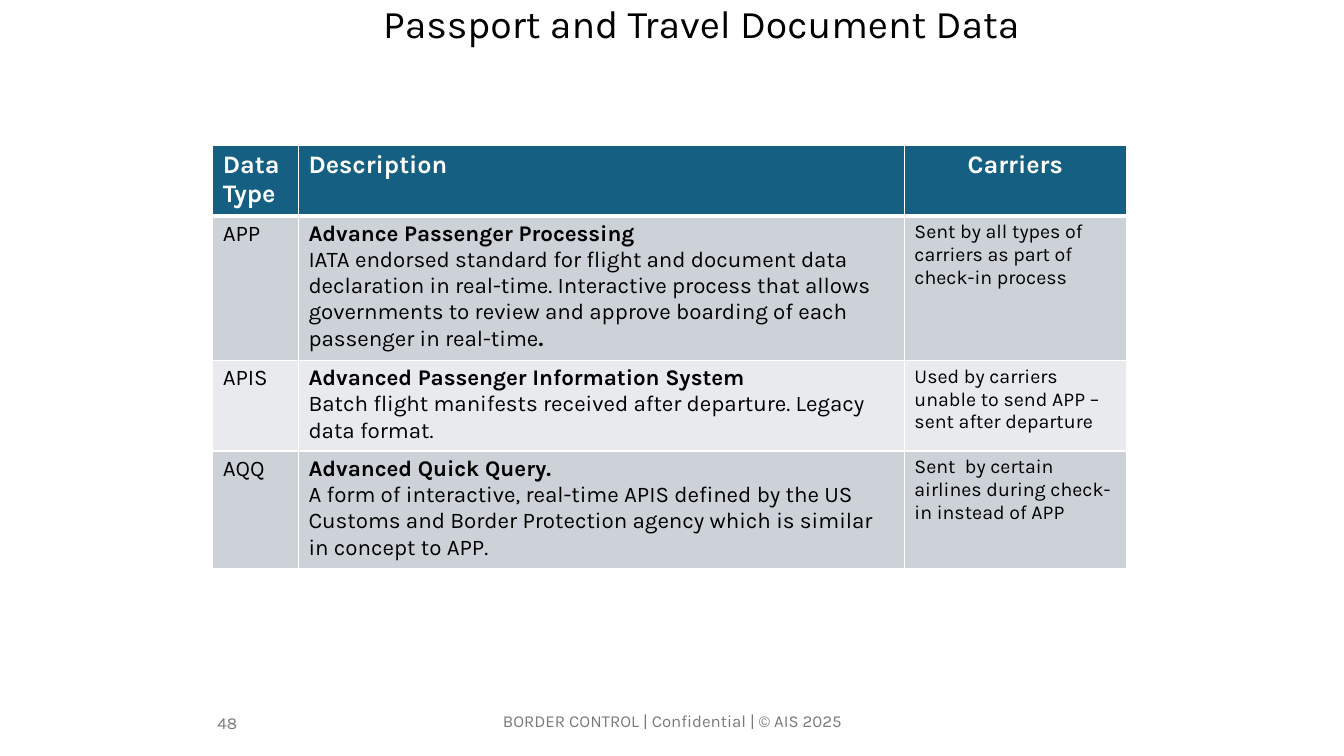
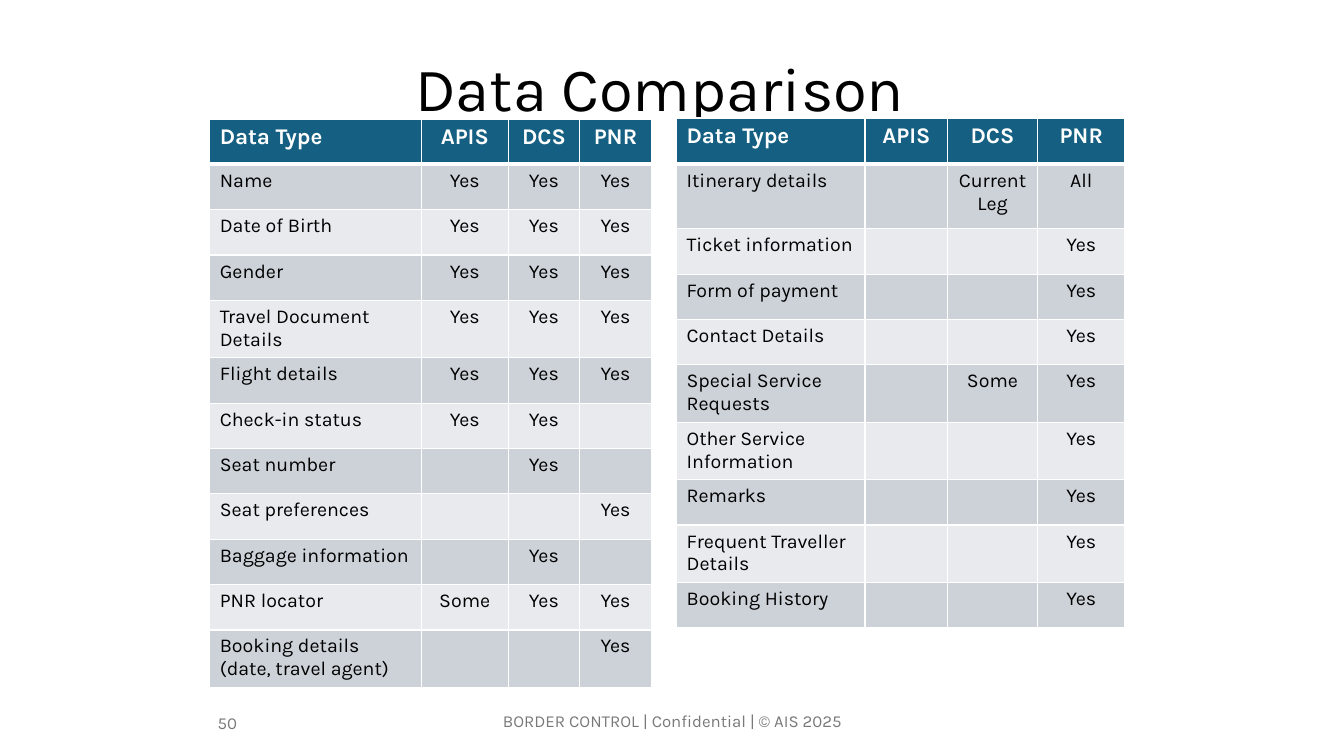
from lxml.etree import SubElement
from pptx import Presentation
from pptx.dml.color import RGBColor
from pptx.enum.text import MSO_ANCHOR, MSO_AUTO_SIZE, PP_ALIGN
from pptx.oxml.ns import qn
from pptx.util import Inches, Pt

# Shared style
FONT = "Karla"
COLORS = {
    "text": "000000",
    "footer": "797979",
    "header": "156082",
    "dark_band": "CCD2D8",
    "light_band": "E8EAED",
    "white": "FFFFFF",
}
LEFT, CENTER, RIGHT = PP_ALIGN.LEFT, PP_ALIGN.CENTER, PP_ALIGN.RIGHT
FOOTER = "BORDER CONTROL | Confidential | © AIS 2025"

# Travel document table: a description is a bold name, its text and a bold ending
DOCUMENT_HEADER = ("Data Type", "Description", "Carriers")
DOCUMENT_ROWS = [
    ("APP",
     [[("Advance Passenger Processing", True)],
      [("IATA endorsed standard for flight and document data declaration in "
        "real-time. Interactive process that allows governments to review and "
        "approve boarding of each passenger in real-time", False), (".", True)]],
     "Sent by all types of carriers as part of check-in process"),
    ("APIS",
     [[("Advanced Passenger Information System", True)],
      [("Batch flight manifests received after departure. Legacy data format.",
        False)]],
     "Used by carriers unable to send APP – sent after departure"),
    ("AQQ",
     [[("Advanced Quick Query.", True)],
      [("A form of interactive, real-time APIS defined by the US Customs and "
        "Border Protection agency which is similar in concept to APP.", False)]],
     "Sent  by certain airlines during check-in instead of APP"),
]

# Comparison tables
COMPARISON_HEADER = ("Data Type", "APIS", "DCS", "PNR")
PASSENGER_ROWS = [
    ("Name", "Yes", "Yes", "Yes"),
    ("Date of Birth", "Yes", "Yes", "Yes"),
    ("Gender", "Yes", "Yes", "Yes"),
    ("Travel Document Details", "Yes", "Yes", "Yes"),
    ("Flight details", "Yes", "Yes", "Yes"),
    ("Check-in status", "Yes", "Yes", ""),
    ("Seat number", "", "Yes", ""),
    ("Seat preferences", "", "", "Yes"),
    ("Baggage information", "", "Yes", ""),
    ("PNR locator", "Some", "Yes", "Yes"),
    ("Booking details (date, travel agent)", "", "", "Yes"),
]
BOOKING_ROWS = [
    ("Itinerary details", "", "Current Leg", "All"),
    ("Ticket information", "", "", "Yes"),
    ("Form of payment", "", "", "Yes"),
    ("Contact Details", "", "", "Yes"),
    ("Special Service Requests", "", "Some", "Yes"),
    ("Other Service Information", "", "", "Yes"),
    ("Remarks", "", "", "Yes"),
    ("Frequent Traveller Details", "", "", "Yes"),
    ("Booking History", "", "", "Yes"),
]


def write_text(frame, text, size, color="text", bold=False, align=LEFT, spacing=None):
    """Write a string, or a list of paragraphs made of (text, bold) pairs."""
    paragraphs = [[(text, bold)]] if isinstance(text, str) else text
    for index, pieces in enumerate(paragraphs):
        para = frame.paragraphs[0] if index == 0 else frame.add_paragraph()
        para.alignment = align
        if spacing:
            para.line_spacing = spacing
        for piece, is_bold in pieces:
            if not piece:
                continue
            span = para.add_run()
            span.text = piece
            span.font.name = FONT
            span.font.size = Pt(size)
            span.font.bold = is_bold
            span.font.color.rgb = RGBColor.from_string(COLORS[color])


def add_title(page, text, box, size):
    title = page.shapes.title
    title.left, title.top, title.width, title.height = map(Inches, box)
    frame = title.text_frame
    frame.word_wrap = True
    frame.auto_size = MSO_AUTO_SIZE.NONE
    frame.vertical_anchor = MSO_ANCHOR.TOP
    write_text(frame, text, size, align=CENTER, spacing=0.9)


def add_label(page, text, box, align):
    frame = page.shapes.add_textbox(*map(Inches, box)).text_frame
    frame.word_wrap = True
    frame.margin_left = 0 if align == RIGHT else Inches(0.1)
    frame.vertical_anchor = MSO_ANCHOR.MIDDLE
    write_text(frame, text, 12, color="footer", align=align)


def add_page(deck, title, title_box, title_size, number):
    page = deck.slides.add_slide(deck.slide_layouts.get_by_name("Title Only"))
    add_title(page, title, title_box, title_size)
    add_label(page, FOOTER, (4.42, 6.95, 4.5, 0.4), CENTER)
    add_label(page, str(number), (2.04, 6.97, 0.41, 0.4), RIGHT)
    return page


def style_cell(cell, fill, top=1, bottom=1):
    # Borders come before the fill in the cell properties
    properties = cell._tc.get_or_add_tcPr()
    for side, points in (("L", 1), ("R", 1), ("T", top), ("B", bottom)):
        line = SubElement(properties, qn(f"a:ln{side}"), w=str(Pt(points)))
        solid = SubElement(line, qn("a:solidFill"))
        SubElement(solid, qn("a:srgbClr"), val=COLORS["white"])
    cell.fill.solid()
    cell.fill.fore_color.rgb = RGBColor.from_string(COLORS[fill])


def add_data_table(page, corner, widths, heights, header, rows,
                   header_size, body_sizes, header_aligns, body_aligns):
    left, top = corner
    table = page.shapes.add_table(
        len(heights), len(widths), Inches(left), Inches(top),
        Inches(sum(widths)), Inches(sum(heights))).table
    for column, width in zip(table.columns, widths):
        column.width = Inches(width)
    for row, height in zip(table.rows, heights):
        row.height = Inches(height)

    # Header row
    for index, (text, align) in enumerate(zip(header, header_aligns)):
        cell = table.cell(0, index)
        style_cell(cell, "header", bottom=3)
        write_text(cell.text_frame, text, header_size, "white", True, align)

    # Banded body rows
    for number, values in enumerate(rows, start=1):
        band = "dark_band" if number % 2 else "light_band"
        for index, text in enumerate(values):
            cell = table.cell(number, index)
            style_cell(cell, band, top=3 if number == 1 else 1)
            write_text(cell.text_frame, text, body_sizes[index],
                       align=body_aligns[index])


def add_comparison_table(page, corner, widths, heights, rows):
    aligns = [LEFT] + [CENTER] * 3
    add_data_table(page, corner, widths, heights, COMPARISON_HEADER, rows,
                   16, [14] * 4, aligns, aligns)


def build_document_page(deck):
    page = add_page(deck, "Passport and Travel Document Data",
                    (1.67, 0, 10.57, 1.27), 28, 48)
    add_data_table(page, (2.11, 1.44), [0.85, 6.01, 2.2], [0.67, 1.4, 0.88, 1.14],
                   DOCUMENT_HEADER, DOCUMENT_ROWS, 18, [16, 16, 14],
                   [LEFT, LEFT, CENTER], [LEFT] * 3)


def build_comparison_page(deck):
    page = add_page(deck, "Data Comparison ", (2.08, 0.53, 9.08, 1.25), 44, 50)
    single, double = 0.45, 0.57
    add_comparison_table(
        page, (2.08, 1.18), [2.1, 0.86, 0.71, 0.71],
        [single] * 4 + [double] + [single] * 6 + [double], PASSENGER_ROWS)
    add_comparison_table(
        page, (6.71, 1.17), [1.87, 0.82, 0.89, 0.87],
        [0.46, 0.64] + [single] * 3 + [double] * 2 + [single, double, single],
        BOOKING_ROWS)


def main():
    deck = Presentation()
    deck.slide_width, deck.slide_height = Inches(13.33), Inches(7.5)
    build_document_page(deck)
    build_comparison_page(deck)
    deck.save("out.pptx")


if __name__ == "__main__":
    main()
